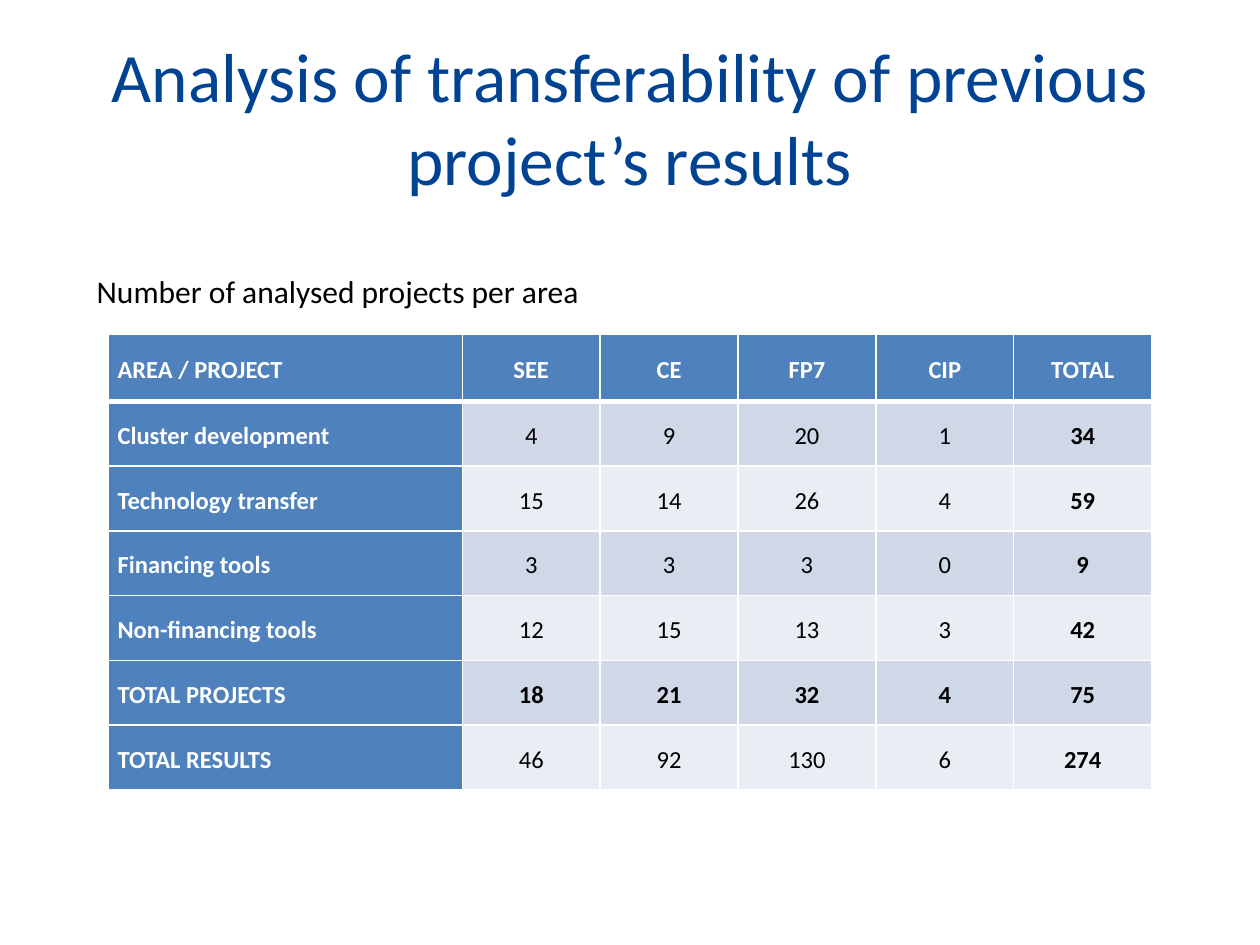
from lxml.etree import SubElement
from pptx import Presentation
from pptx.dml.color import RGBColor
from pptx.enum.text import MSO_ANCHOR, PP_ALIGN
from pptx.oxml.ns import qn
from pptx.util import Cm, Pt

HUES = {"title": "004393", "head": "4F81BD", "odd": "D0D8E8",
        "even": "E9EDF4", "white": "FFFFFF", "black": "000000"}


def write(frame, text, size, hue, bold=False, align=PP_ALIGN.LEFT, gap=1.0):
    par = frame.paragraphs[0]
    par.alignment, par.line_spacing = align, gap
    run = par.add_run()
    run.text = text
    look = {"name": "Calibri", "size": Pt(size), "bold": bold}
    for key, value in look.items():
        setattr(run.font, key, value)
    run.font.color.rgb = RGBColor.from_string(HUES[hue])


def edge(cell, side, width):
    line = SubElement(cell._tc.get_or_add_tcPr(), qn("a:ln" + side), w=str(Pt(width)))
    fill = SubElement(line, qn("a:solidFill"))
    SubElement(fill, qn("a:srgbClr"), val=HUES["white"])


deck = Presentation()
deck.slide_width, deck.slide_height = Cm(25.4), Cm(19.05)
slide = deck.slides.add_slide(deck.slide_layouts[6])

# Title
frame = slide.shapes.add_textbox(Cm(1.27), Cm(0.76), Cm(22.86), Cm(3.18)).text_frame
frame.word_wrap = True
frame.vertical_anchor = MSO_ANCHOR.MIDDLE
write(frame, "Analysis of transferability of previous project’s results",
      39.6, "title", align=PP_ALIGN.CENTER)

# Table
rows = [
    ("AREA / PROJECT", "SEE", "CE", "FP7", "CIP", "TOTAL"),
    ("Cluster development", 4, 9, 20, 1, 34),
    ("Technology transfer", 15, 14, 26, 4, 59),
    ("Financing tools", 3, 3, 3, 0, 9),
    ("Non-financing tools", 12, 15, 13, 3, 42),
    ("TOTAL PROJECTS", 18, 21, 32, 4, 75),
    ("TOTAL RESULTS", 46, 92, 130, 6, 274),
]
last = len(rows[0]) - 1
table = slide.shapes.add_table(len(rows), last + 1, Cm(2.19), Cm(6.73),
                               Cm(21.03), Cm(9.19)).table
for c, col in enumerate(table.columns):
    col.width = Cm(2.78 if c else 7.13)
for r, row in enumerate(table.rows):
    row.height = Cm(1.305 if r else 1.36)

# Cells
form = {"vertical_anchor": MSO_ANCHOR.MIDDLE, "margin_left": Cm(0.18),
        "margin_right": Cm(0.18), "margin_top": 0, "margin_bottom": 0}
for r, row in enumerate(rows):
    for c, value in enumerate(row):
        cell = table.cell(r, c)
        for key, item in form.items():
            setattr(cell, key, item)
        thick = {0: "B", 1: "T"}.get(r)
        for side in "LRTB":
            edge(cell, side, 3 if side == thick else 1)
        head = r == 0 or c == 0
        hue = "head" if head else "odd" if r % 2 else "even"
        cell.fill.solid()
        cell.fill.fore_color.rgb = RGBColor.from_string(HUES[hue])
        write(cell.text_frame, str(value), 14, "white" if head else "black",
              bold=head or c == last or row[0] == "TOTAL PROJECTS",
              align=PP_ALIGN.CENTER if c else PP_ALIGN.LEFT, gap=1.15)

# Caption
frame = slide.shapes.add_textbox(Cm(1.7), Cm(5.36), Cm(10.49), Cm(1.02)).text_frame
frame.word_wrap = False
write(frame, "Number of analysed projects per area", 18, "black")

deck.save("out.pptx")
